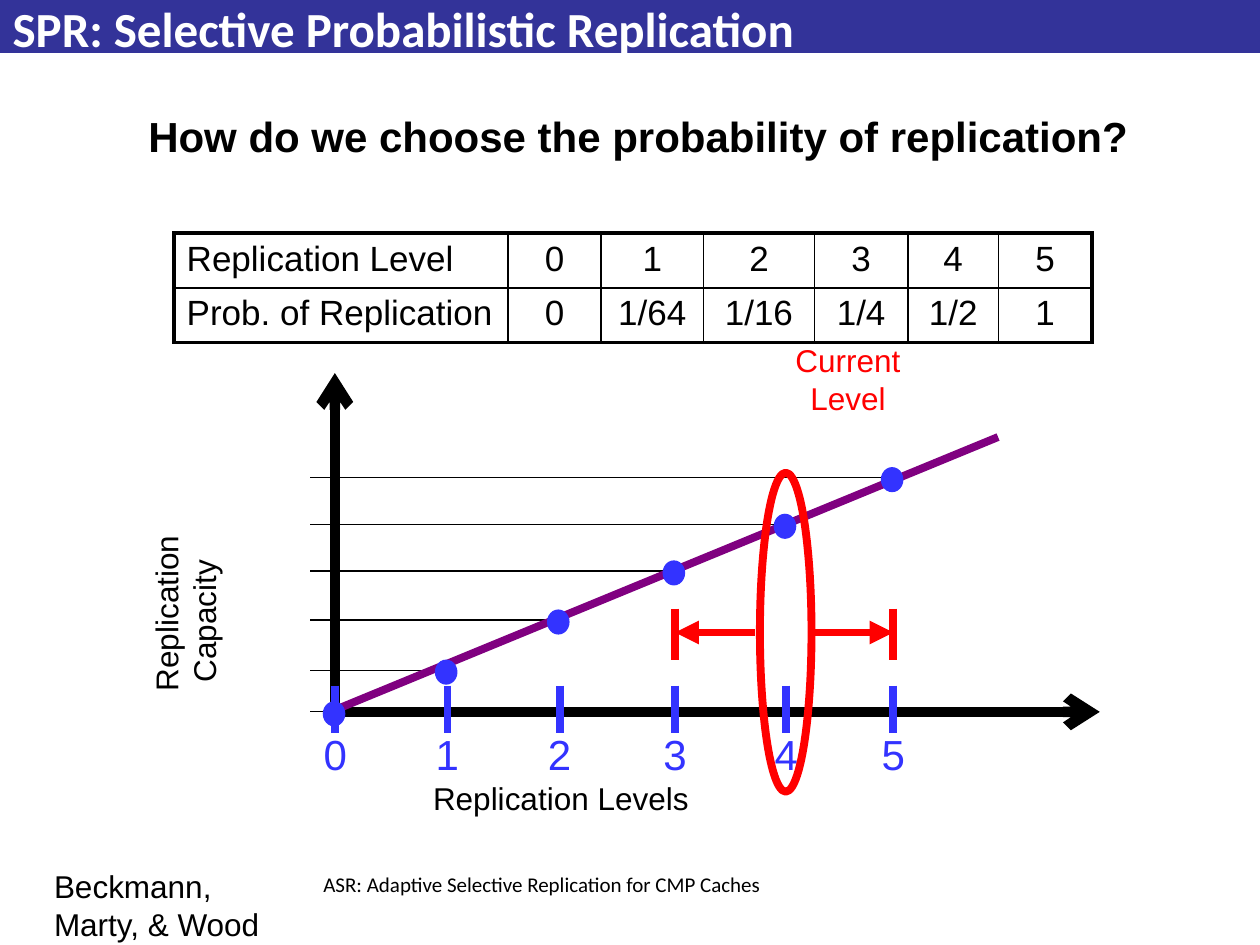
from lxml import etree
from pptx import Presentation
from pptx import util as u
from pptx.dml import color
from pptx.enum import shapes, text
from pptx.oxml import ns

BLACK, WHITE, RED, BLUE = "000000", "FFFFFF", "FF0000", "3333FF"
NAVY, PURPLE = "333399", "800080"
LEFT, CENTER = text.PP_ALIGN.LEFT, text.PP_ALIGN.CENTER

LEVELS = ["0", "1", "2", "3", "4", "5"]
LEVEL_X = [6.76, 9.02, 11.28, 13.61, 15.85, 18.01]
CAPACITY_Y = [14.35, 13.51, 12.5, 11.51, 10.57, 9.63]
AXIS_X, AXIS_Y = 6.75, 14.35

TABLE_ROWS = [
    ["Replication Level", *LEVELS],
    ["Prob. of Replication", "0", "1/64", "1/16", "1/4", "1/2", "1"],
]
COLUMN_WIDTHS = [6.73, 1.88, 2.06, 2.24, 1.88, 1.83, 1.88]


def rgb(value):
    """Turn a hex string into a colour."""
    return color.RGBColor.from_string(value)


def apply(target, values):
    """Set attributes from a dict of format values."""
    for name, value in values.items():
        setattr(target, name, value)


def box(left, top, width, height):
    """Return a position and size in EMU from centimetres."""
    return [u.Cm(length) for length in (left, top, width, height)]


def write(frame, content, size, ink=BLACK, align=LEFT, bold=False, font="Arial"):
    """Fill a text frame with one formatted paragraph per line of content."""
    frame.text = content
    for paragraph in frame.paragraphs:
        paragraph.alignment = align
        apply(paragraph.font, {"name": font, "size": u.Pt(size), "bold": bold})
        paragraph.font.color.rgb = rgb(ink)


def add_label(slide, content, place, size=18, rotation=0, **style):
    """Add a wrapped text box."""
    shape = slide.shapes.add_textbox(*box(*place))
    shape.rotation = rotation
    shape.text_frame.word_wrap = True
    write(shape.text_frame, content, size, **style)


def add_line(slide, start, end, ink=BLACK, width=0.75, arrow=None):
    """Add a straight line, with an optional arrowhead at its end."""
    line = slide.shapes.add_connector(
        shapes.MSO_CONNECTOR.STRAIGHT, *box(*start, *end))
    line.line.color.rgb = rgb(ink)
    line.line.width = u.Pt(width)
    if arrow:
        etree.SubElement(line.line._get_or_add_ln(), ns.qn("a:tailEnd"), type=arrow)
    etree.SubElement(line.element.spPr, ns.qn("a:effectLst"))


def add_figure(slide, kind, place, fill=None, outline=None, width=0.75):
    """Add a preset shape without a shadow."""
    shape = slide.shapes.add_shape(kind, *box(*place))
    shape.shadow.inherit = False
    if fill:
        shape.fill.solid()
        shape.fill.fore_color.rgb = rgb(fill)
    else:
        shape.fill.background()
    if outline:
        shape.line.color.rgb = rgb(outline)
        shape.line.width = u.Pt(width)
    else:
        shape.line.fill.background()
    return shape


def add_title(slide, content):
    """Place the title over a banner."""
    title = slide.shapes.title
    apply(title, dict(zip(("left", "top", "width", "height"), box(0, 0, 22.86, 1.14))))
    apply(title.text_frame, {"vertical_anchor": text.MSO_ANCHOR.MIDDLE,
                             "auto_size": text.MSO_AUTO_SIZE.NONE})
    write(title.text_frame, content, 28, ink=WHITE, bold=True, font="Calibri")
    banner = add_figure(slide, shapes.MSO_SHAPE.RECTANGLE, (0, 0, 25.4, 1.07), NAVY)
    title.element.addprevious(banner.element)


def set_borders(cell, widths):
    """Draw the cell borders from a dict of side and width in points."""
    properties = cell._tc.get_or_add_tcPr()
    for side, width in widths.items():
        line = etree.SubElement(properties, ns.qn(f"a:ln{side}"), w=str(u.Pt(width)))
        fill = etree.SubElement(line, ns.qn("a:solidFill"))
        etree.SubElement(fill, ns.qn("a:srgbClr"), val=BLACK)


def add_probability_table(slide):
    """Add the table of replication levels and probabilities."""
    row_count, column_count = len(TABLE_ROWS), len(COLUMN_WIDTHS)
    table = slide.shapes.add_table(
        row_count, column_count, *box(3.51, 4.7, sum(COLUMN_WIDTHS), 2.2)).table
    apply(table, {"first_row": False, "horz_banding": False})
    for column, width in zip(table.columns, COLUMN_WIDTHS):
        column.width = u.Cm(width)
    for i, row in enumerate(TABLE_ROWS):
        for j, content in enumerate(row):
            cell = table.cell(i, j)
            write(cell.text_frame, content, 20, align=CENTER if j else LEFT)
            edges = {"L": j == 0, "R": j == column_count - 1,
                     "T": i == 0, "B": i == row_count - 1}
            set_borders(cell, {side: 2.25 if outer else 1
                               for side, outer in edges.items()})
            cell.fill.background()


def add_axes(slide):
    """Add the guides, axes, axis names and capacity line."""
    for x, y in zip(LEVEL_X, CAPACITY_Y):
        add_line(slide, (6.25, y), (x, y))
    for tip in ((AXIS_X, 7.52), (22.17, AXIS_Y)):
        add_line(slide, (AXIS_X, AXIS_Y), tip, width=6, arrow="arrow")
    add_label(slide, "Replication\n Capacity", (1.27, 9.65, 6.1, 2.97), rotation=270)
    add_label(slide, "Replication Levels", (8.48, 15.57, 9.68, 1.6))
    add_line(slide, (6.78, 14.3), (20.12, 8.81), PURPLE, 4.5)


def add_level(slide, level, x, y):
    """Add the marker, number and tick of one level."""
    add_figure(slide, shapes.MSO_SHAPE.OVAL, (x - 0.24, y - 0.2, 0.43, 0.48), BLUE, BLUE)
    add_label(slide, level, (x - 0.6, 14.56, 1.2, 1.27), 24, ink=BLUE, align=CENTER)
    add_line(slide, (x, 13.82), (x, 14.78), BLUE, 4.5)


def add_current_level(slide):
    """Ring the current level and point to its neighbours."""
    add_figure(slide, shapes.MSO_SHAPE.OVAL, (15.32, 9.53, 1.04, 6.43),
               outline=RED, width=4.5)
    add_label(slide, "Current\nLevel", (14.96, 6.76, 4.27, 2.97), ink=RED, align=CENTER)
    for start, end in ((15.21, LEVEL_X[3]), (16.41, LEVEL_X[5])):
        add_line(slide, (start, 12.75), (end, 12.75), RED, 4.5, "triangle")
        add_line(slide, (end, 12.27), (end, 13.31), RED, 4.5)


def main():
    """Build the slide and save it."""
    presentation = Presentation()
    apply(presentation, {"slide_width": u.Cm(25.4), "slide_height": u.Cm(19.05)})
    slide = presentation.slides.add_slide(presentation.slide_layouts[5])
    add_title(slide, "SPR: Selective Probabilistic Replication")
    add_label(slide, "Beckmann, Marty, & Wood", (0.84, 17.35, 4.88, 1.32))
    add_label(slide, "ASR: Adaptive Selective Replication for CMP Caches",
              (6.27, 17.45, 13, 1.2), 12, font="Calibri")
    add_axes(slide)
    for level, x, y in zip(LEVELS, LEVEL_X, CAPACITY_Y):
        add_level(slide, level, x, y)
    add_probability_table(slide)
    add_current_level(slide)
    add_label(slide, "How do we choose the probability of replication?",
              (2.74, 2.11, 20.6, 1.27), 24, bold=True)
    presentation.save("out.pptx")


if __name__ == "__main__":
    main()
